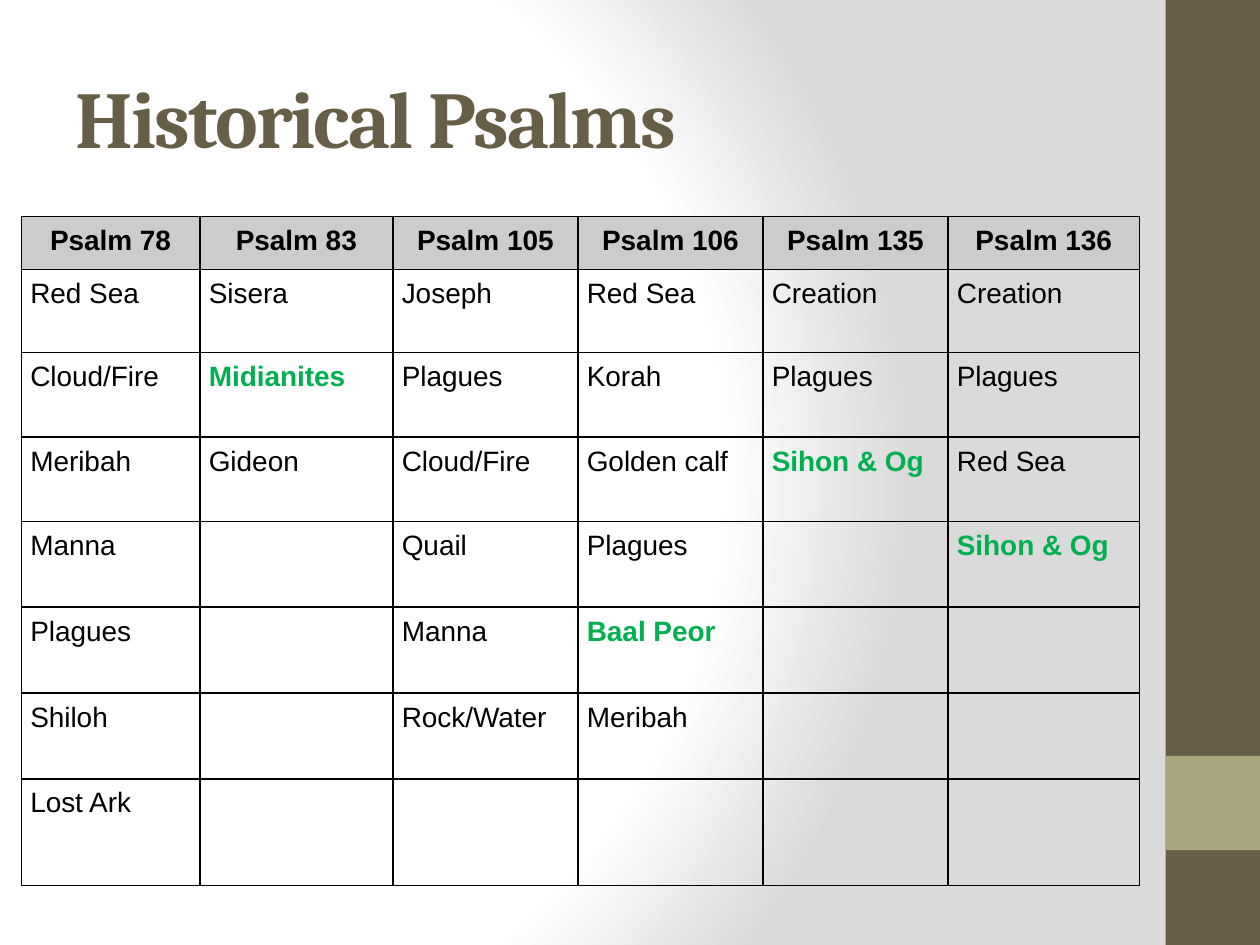
from dataclasses import dataclass

from lxml.etree import SubElement
from pptx import Presentation
from pptx.dml.color import RGBColor as RGB
from pptx.enum.shapes import MSO_SHAPE as Shape
from pptx.enum.text import MSO_ANCHOR as Anchor, PP_ALIGN as Align
from pptx.oxml.ns import qn
from pptx.util import Cm, Pt


@dataclass(frozen=True)
class Theme:
    """Colours, fonts and type sizes of the slide."""
    brown: str = "675E47"
    olive: str = "A9A57C"
    header: str = "CCCCCC"
    ink: str = "000000"
    accent: str = "00B050"
    white: str = "FFFFFF"
    grey: str = "DADADA"
    title_font: str = "Cambria"
    body_font: str = "Arial"
    title_size: int = 46
    body_size: int = 16


THEME = Theme()
HIGHLIGHTS = {"Midianites", "Sihon & Og", "Baal Peor"}
PSALMS = {
    "Psalm 78": ["Red Sea", "Cloud/Fire", "Meribah", "Manna", "Plagues",
                 "Shiloh", "Lost Ark"],
    "Psalm 83": ["Sisera", "Midianites", "Gideon"],
    "Psalm 105": ["Joseph", "Plagues", "Cloud/Fire", "Quail", "Manna",
                  "Rock/Water"],
    "Psalm 106": ["Red Sea", "Korah", "Golden calf", "Plagues", "Baal Peor",
                  "Meribah"],
    "Psalm 135": ["Creation", "Plagues", "Sihon & Og"],
    "Psalm 136": ["Creation", "Plagues", "Red Sea", "Sihon & Og"],
}
COLUMN_WIDTHS = [3.6, 3.89, 3.73, 3.73, 3.73, 3.86]
ROW_HEIGHTS = [1.07, 1.68, 1.7, 1.7, 1.73, 1.73, 1.73, 2.15]


def paint_background(slide):
    """Fill the slide with a round gradient from white to grey."""
    slide.background.fill.gradient()
    gradient = slide.element.find(".//" + qn("a:gradFill"))
    for child in list(gradient):
        gradient.remove(child)
    stops = SubElement(gradient, qn("a:gsLst"))
    for percent, colour in [(0, THEME.white), (75, THEME.white), (100, THEME.grey)]:
        stop = SubElement(stops, qn("a:gs"), pos=str(percent * 1000))
        SubElement(stop, qn("a:srgbClr"), val=colour)
    circle = SubElement(gradient, qn("a:path"), path="circle")
    SubElement(circle, qn("a:fillToRect"), l="20000", t="50000", r="100000", b="50000")


def add_band(slide, top, height, colour):
    """Add one block of the band along the right edge."""
    band = slide.shapes.add_shape(Shape.RECTANGLE, Cm(23.5), Cm(top), Cm(1.9), Cm(height))
    band.shadow.inherit = False
    band.fill.solid()
    band.fill.fore_color.rgb = RGB.from_string(colour)
    band.line.fill.background()


def add_run(paragraph, text, font, size, colour, bold):
    """Append a formatted run to a paragraph and return it."""
    run = paragraph.add_run()
    run.text = text
    run.font.name = font
    run.font.size = Pt(size)
    run.font.bold = bold
    run.font.color.rgb = RGB.from_string(colour)
    return run


def set_title(slide, text):
    """Place and write the slide title."""
    title = slide.shapes.title
    title.left, title.top, title.width, title.height = Cm(1.27), Cm(0.76), Cm(21.16), Cm(3.18)
    title.text_frame.vertical_anchor = Anchor.MIDDLE
    paragraph = title.text_frame.paragraphs[0]
    paragraph.alignment = Align.LEFT
    run = add_run(paragraph, text, THEME.title_font, THEME.title_size, THEME.brown, True)
    run.font._element.set("spc", "-100")


def draw_borders(cell):
    """Give a table cell a thin line on every side."""
    properties = cell._tc.get_or_add_tcPr()
    for side in ("a:lnL", "a:lnR", "a:lnT", "a:lnB"):
        line = SubElement(properties, qn(side), w=str(Pt(1)))
        SubElement(SubElement(line, qn("a:solidFill")), qn("a:srgbClr"), val=THEME.ink)


def fill_cell(cell, text, is_header):
    """Format a table cell and write its text."""
    cell.margin_left = cell.margin_right = cell.margin_top = cell.margin_bottom = Cm(0.18)
    draw_borders(cell)
    if is_header:
        cell.fill.solid()
        cell.fill.fore_color.rgb = RGB.from_string(THEME.header)
    else:
        cell.fill.background()
    if text:
        highlighted = text in HIGHLIGHTS
        paragraph = cell.text_frame.paragraphs[0]
        paragraph.alignment = Align.CENTER if is_header else Align.LEFT
        add_run(paragraph, text, THEME.body_font, THEME.body_size,
                THEME.accent if highlighted else THEME.ink, is_header or highlighted)


def add_psalm_table(slide):
    """Add the table with one column of events per psalm."""
    frame = slide.shapes.add_table(len(ROW_HEIGHTS), len(PSALMS), Cm(0.43), Cm(4.36),
                                   Cm(sum(COLUMN_WIDTHS)), Cm(sum(ROW_HEIGHTS)))
    table = frame.table
    table.first_row = table.horz_banding = False
    for row, height in zip(table.rows, ROW_HEIGHTS):
        row.height = Cm(height)
    for column, width in zip(table.columns, COLUMN_WIDTHS):
        column.width = Cm(width)
    for column_index, (psalm, events) in enumerate(PSALMS.items()):
        entries = [psalm, *events]
        for row_index in range(len(ROW_HEIGHTS)):
            text = entries[row_index] if row_index < len(entries) else ""
            fill_cell(table.cell(row_index, column_index), text, row_index == 0)


def main():
    """Build the slide and save it."""
    deck = Presentation()
    deck.slide_width, deck.slide_height = Cm(25.4), Cm(19.05)
    slide = deck.slides.add_slide(deck.slide_layouts[5])
    paint_background(slide)
    add_band(slide, 0, 19.05, THEME.brown)
    add_band(slide, 15.24, 1.9, THEME.olive)
    set_title(slide, "Historical Psalms")
    add_psalm_table(slide)
    deck.save("out.pptx")


if __name__ == "__main__":
    main()
